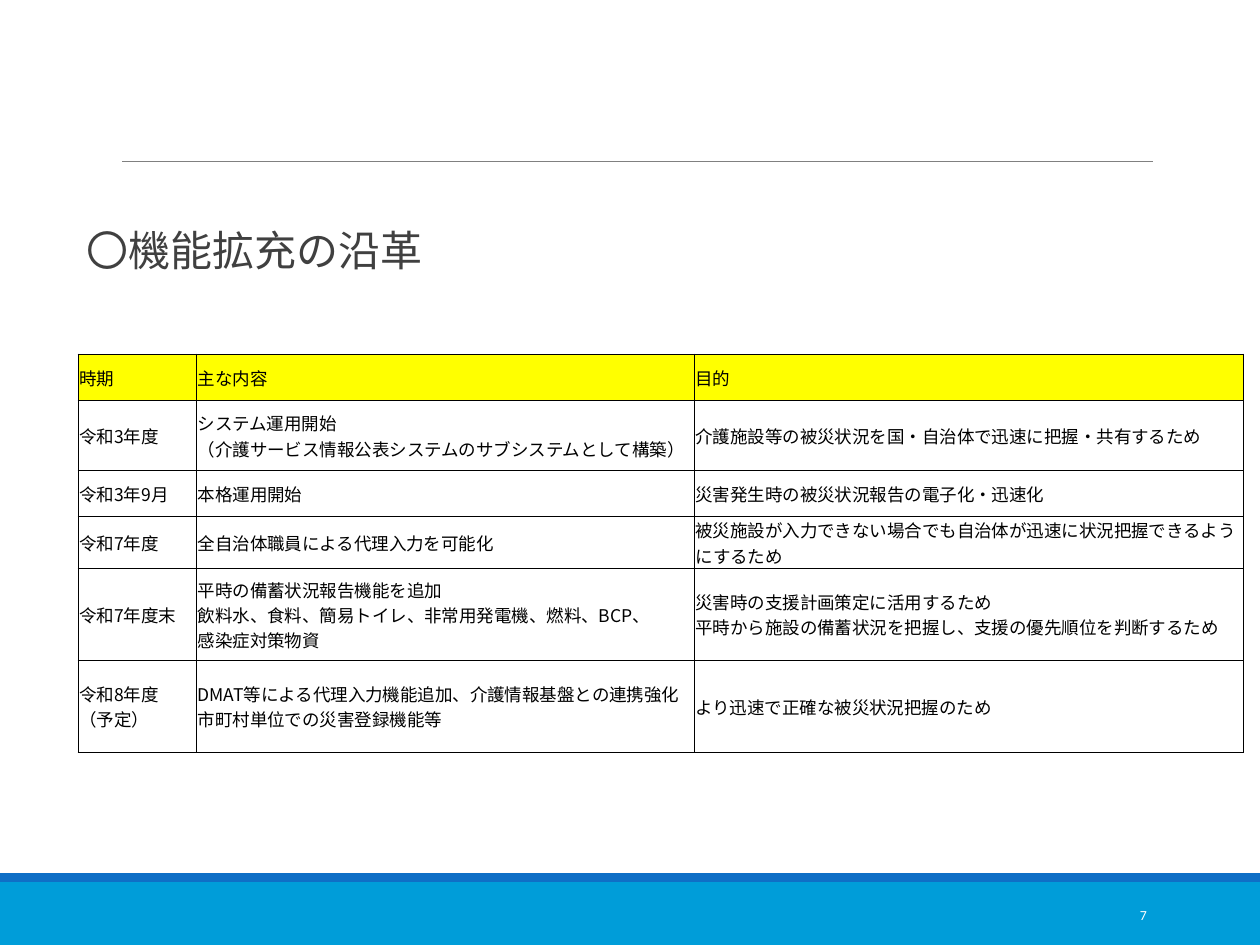
"""Build the slide on the history of system feature expansion."""
from lxml.etree import SubElement
from pptx import Presentation
from pptx.dml.color import RGBColor
from pptx.enum.shapes import MSO_CONNECTOR, MSO_SHAPE
from pptx.enum.text import MSO_ANCHOR, PP_ALIGN
from pptx.oxml.ns import qn
from pptx.util import Inches, Pt

COLORS = {
    "band": "009DD9",
    "stripe": "0F6FC6",
    "rule": "808080",
    "heading": "404040",
    "header": "FFFF00",
    "black": "000000",
    "white": "FFFFFF",
}
COLUMN_WIDTHS = [0.94, 3.95, 4.36]
ROW_HEIGHTS = [0.37, 0.55, 0.37, 0.41, 0.73, 0.73]
ROWS = [
    ["時期", "主な内容", "目的"],
    [
        "令和3年度",
        "システム運用開始\n（介護サービス情報公表システムのサブシステムとして構築）",
        "介護施設等の被災状況を国・自治体で迅速に把握・共有するため",
    ],
    ["令和3年9月", "本格運用開始", "災害発生時の被災状況報告の電子化・迅速化"],
    [
        "令和7年度",
        "全自治体職員による代理入力を可能化",
        "被災施設が入力できない場合でも自治体が迅速に状況把握できるようにするため",
    ],
    [
        "令和7年度末",
        "平時の備蓄状況報告機能を追加\v飲料水、食料、簡易トイレ、非常用発電機、燃料、BCP、\n感染症対策物資",
        "災害時の支援計画策定に活用するため\v平時から施設の備蓄状況を把握し、支援の優先順位を判断するため",
    ],
    [
        "令和8年度\n（予定）",
        "DMAT等による代理入力機能追加、介護情報基盤との連携強化\v市町村単位での災害登録機能等",
        "より迅速で正確な被災状況把握のため",
    ],
]


def style_font(paragraph, name, size, color):
    paragraph.font.name = name
    paragraph.font.size = Pt(size)
    paragraph.font.bold = False
    paragraph.font.color.rgb = RGBColor.from_string(COLORS[color])


def add_borders(cell):
    properties = cell._tc.get_or_add_tcPr()
    for side in ("lnL", "lnR", "lnT", "lnB"):
        border = SubElement(properties, qn(f"a:{side}"), w=str(Pt(0.5)))
        fill = SubElement(border, qn("a:solidFill"))
        SubElement(fill, qn("a:srgbClr"), val=COLORS["black"])


presentation = Presentation()
presentation.slide_width = Inches(10)
presentation.slide_height = Inches(7.5)
slide = presentation.slides.add_slide(presentation.slide_layouts[6])

for top, height, color in [(7, 0.5, "band"), (6.93, 0.07, "stripe")]:
    shape = slide.shapes.add_shape(
        MSO_SHAPE.RECTANGLE, Inches(0), Inches(top), Inches(10), Inches(height)
    )
    shape.shadow.inherit = False
    shape.fill.solid()
    shape.fill.fore_color.rgb = RGBColor.from_string(COLORS[color])
    shape.line.fill.background()

rule = slide.shapes.add_connector(
    MSO_CONNECTOR.STRAIGHT, Inches(0.97), Inches(1.28), Inches(9.15), Inches(1.28)
)
rule.line.color.rgb = RGBColor.from_string(COLORS["rule"])
rule.line.width = Pt(0.5)
SubElement(rule._element.spPr, qn("a:effectLst"))

heading = slide.shapes.add_textbox(
    Inches(0.62), Inches(1.78), Inches(8.25), Inches(4.4)
)
frame = heading.text_frame
frame.word_wrap = True
frame.margin_left = frame.margin_right = 0
paragraph = frame.paragraphs[0]
paragraph.text = "〇機能拡充の沿革"
paragraph.line_spacing = 0.9
paragraph.space_after = Pt(1.5)
paragraph._p.get_or_add_pPr().set("marL", str(Inches(0.07)))
style_font(paragraph, "Calibri", 24, "heading")

page_number = slide.shapes.add_textbox(
    Inches(8.12), Inches(7.06), Inches(1.08), Inches(0.4)
)
frame = page_number.text_frame
frame.word_wrap = True
frame.vertical_anchor = MSO_ANCHOR.MIDDLE
paragraph = frame.paragraphs[0]
paragraph.text = "7"
paragraph.alignment = PP_ALIGN.RIGHT
style_font(paragraph, "Calibri", 7.9, "white")

table = slide.shapes.add_table(
    len(ROWS), len(COLUMN_WIDTHS), Inches(0.62), Inches(2.81),
    Inches(sum(COLUMN_WIDTHS)), Inches(sum(ROW_HEIGHTS)),
).table
table.first_row = False
table.horz_banding = False
for column, width in zip(table.columns, COLUMN_WIDTHS):
    column.width = Inches(width)
for row_index, (row, height) in enumerate(zip(table.rows, ROW_HEIGHTS)):
    row.height = Inches(height)
    for cell, text in zip(row.cells, ROWS[row_index]):
        cell.text = text
        cell.vertical_anchor = MSO_ANCHOR.MIDDLE
        cell.margin_left = cell.margin_right = cell.margin_top = Inches(0.01)
        cell.margin_bottom = 0
        add_borders(cell)
        if row_index == 0:
            cell.fill.solid()
            cell.fill.fore_color.rgb = RGBColor.from_string(COLORS["header"])
        else:
            cell.fill.background()
        for paragraph in cell.text_frame.paragraphs:
            style_font(paragraph, "Noto Sans CJK JP", 10, "black")

presentation.save("out.pptx")
